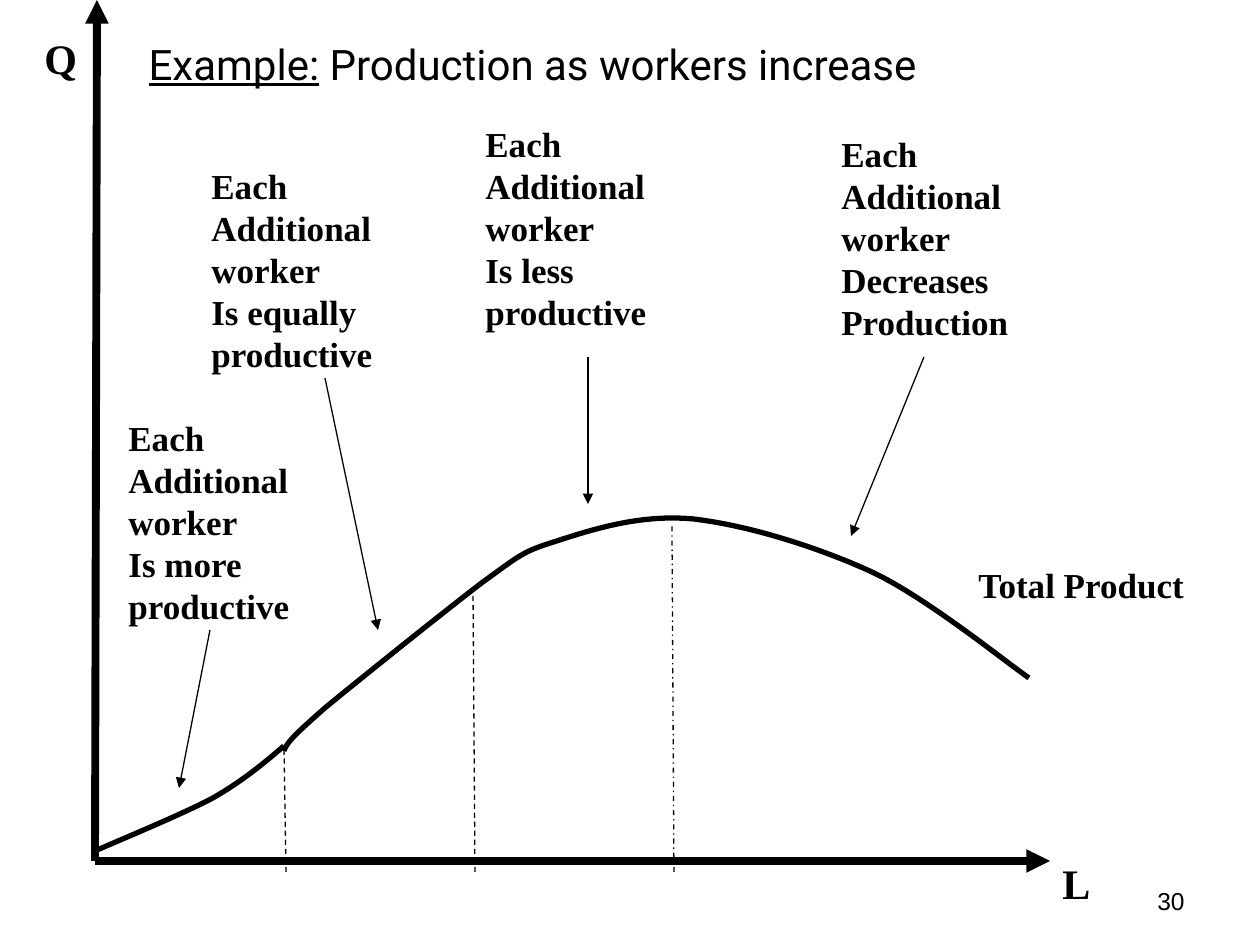
from dataclasses import dataclass

from lxml.etree import SubElement
from pptx import Presentation
from pptx.dml.color import RGBColor
from pptx.enum.dml import MSO_LINE
from pptx.enum.shapes import MSO_CONNECTOR
from pptx.enum.text import MSO_ANCHOR, MSO_AUTO_SIZE, PP_ALIGN
from pptx.oxml.ns import qn
from pptx.util import Inches, Pt

PX_PER_INCH = 126


def px(length):
    return Inches(length / PX_PER_INCH)


@dataclass(frozen=True)
class Theme:
    ink: RGBColor = RGBColor(0, 0, 0)
    title_font: str = "Roboto"
    label_font: str = "Times New Roman"
    number_font: str = "Arial"
    heading_size: int = 24
    label_size: int = 20
    number_size: int = 14
    axis_width: float = 4.5
    curve_width: float = 3
    thin_width: float = 0.75


def apply(target, formats):
    for name, value in formats.items():
        setattr(target, name, value)


def bezier(start, control_1, control_2, end, steps=16):
    """Points along a cubic curve, without its start."""
    for step in range(1, steps + 1):
        t = step / steps
        weights = ((1 - t) ** 3, 3 * t * (1 - t) ** 2, 3 * t * t * (1 - t), t ** 3)
        yield tuple(sum(w * p[axis] for w, p in zip(weights, (start, control_1, control_2, end)))
                    for axis in (0, 1))


class GraphSlide:
    def __init__(self, deck, theme):
        self.theme = theme
        self.slide = deck.slides.add_slide(deck.slide_layouts[5])

    def _run(self, paragraph, text, **formats):
        run = paragraph.add_run()
        run.text = text
        run.font.color.rgb = self.theme.ink
        apply(run.font, formats)

    def _stroke(self, line, width, dash=None):
        line.color.rgb = self.theme.ink
        apply(line, {"width": Pt(width), "dash_style": dash})

    def title(self, box, lead, rest):
        heading = self.slide.shapes.title
        apply(heading, dict(zip(("left", "top", "width", "height"), map(px, box))))
        frame = heading.text_frame
        apply(frame, {"word_wrap": True, "vertical_anchor": MSO_ANCHOR.TOP,
                      "auto_size": MSO_AUTO_SIZE.SHAPE_TO_FIT_TEXT})
        paragraph = frame.paragraphs[0]
        paragraph.alignment = PP_ALIGN.LEFT
        style = {"name": self.theme.title_font, "size": Pt(self.theme.heading_size)}
        self._run(paragraph, lead, underline=True, **style)
        self._run(paragraph, rest, underline=False, **style)

    def label(self, box, lines, size):
        frame = self.slide.shapes.add_textbox(*map(px, box)).text_frame
        apply(frame, {"word_wrap": False, "auto_size": MSO_AUTO_SIZE.SHAPE_TO_FIT_TEXT})
        for index, line in enumerate(lines):
            paragraph = frame.add_paragraph() if index else frame.paragraphs[0]
            self._run(paragraph, line, name=self.theme.label_font, size=Pt(size), bold=True)

    def page_number(self, box, number):
        frame = self.slide.shapes.add_textbox(*map(px, box)).text_frame
        apply(frame, {"word_wrap": True, "vertical_anchor": MSO_ANCHOR.MIDDLE})
        frame.paragraphs[0].alignment = PP_ALIGN.RIGHT
        self._run(frame.paragraphs[0], number, name=self.theme.number_font,
                  size=Pt(self.theme.number_size))

    def line(self, start, end, width, dash=None, arrow=False):
        connector = self.slide.shapes.add_connector(
            MSO_CONNECTOR.STRAIGHT, *map(px, start + end))
        self._stroke(connector.line, width, dash)
        properties = connector._element.spPr
        if arrow:
            SubElement(properties.find(qn("a:ln")), qn("a:tailEnd"), type="triangle")
        SubElement(properties, qn("a:effectLst"))

    def curve(self, start, *segments):
        """Each segment holds two control points and an end point."""
        points = []
        anchor = start
        for segment in segments:
            points += bezier(anchor, *segment)
            anchor = segment[-1]
        builder = self.slide.shapes.build_freeform(*map(px, start))
        builder.add_line_segments([(px(x), px(y)) for x, y in points], close=False)
        outline = builder.convert_to_shape()
        outline.shadow.inherit = False
        outline.fill.background()
        self._stroke(outline.line, self.theme.curve_width)


def main():
    deck = Presentation()
    apply(deck, {"slide_width": px(1260), "slide_height": px(945)})
    theme = Theme()
    graph = GraphSlide(deck, theme)

    graph.page_number((903, 876, 294, 50), "30")
    graph.title((136, 32, 1081, 63), "Example:", " Production as workers increase")

    origin = (95, 861)
    for axis_end in ((1050, 861), (97, 0)):
        graph.line(origin, axis_end, theme.axis_width, arrow=True)

    stage_limits = (
        (672, 525, MSO_LINE.DASH_DOT),
        (473, 588, MSO_LINE.DASH),
        (284, 746, MSO_LINE.DASH),
    )
    for x, top, dash in stage_limits:
        graph.line((x + 2, 872), (x, top), theme.thin_width, dash)

    graph.curve(
        (284, 751),
        ((287, 743), (292, 737), (325, 708)),
        ((359, 680), (445, 611), (483, 582)),
        ((522, 554), (522, 552), (557, 541)),
        ((591, 530), (640, 514), (693, 519)),
        ((746, 525), (815, 546), (872, 572)),
        ((927, 598), (1003, 660), (1029, 678)),
    )
    graph.curve(
        (284, 746),
        ((263, 764), (244, 780), (213, 798)),
        ((181, 815), (115, 842), (95, 851)),
    )

    graph.label((1050, 851, 53, 63), ["L"], theme.heading_size)
    graph.label((32, 26, 58, 63), ["Q"], theme.heading_size)
    graph.label((966, 557, 234, 54), ["Total Product"], theme.label_size)

    stages = (
        ((116, 410, 193), ("Is more", "productive"), (210, 630), (179, 788)),
        ((199, 158, 186), ("Is equally", "productive"), (325, 378), (378, 630)),
        ((473, 116, 186), ("Is less", "productive"), (588, 357), (588, 504)),
        ((829, 126, 202), ("Decreases", "Production"), (924, 357), (851, 536)),
    )
    for place, effect, arrow_start, arrow_end in stages:
        graph.label((*place, 223), ("Each", "Additional", "worker", *effect), theme.label_size)
        graph.line(arrow_start, arrow_end, theme.thin_width, arrow=True)

    deck.save("out.pptx")


if __name__ == "__main__":
    main()
